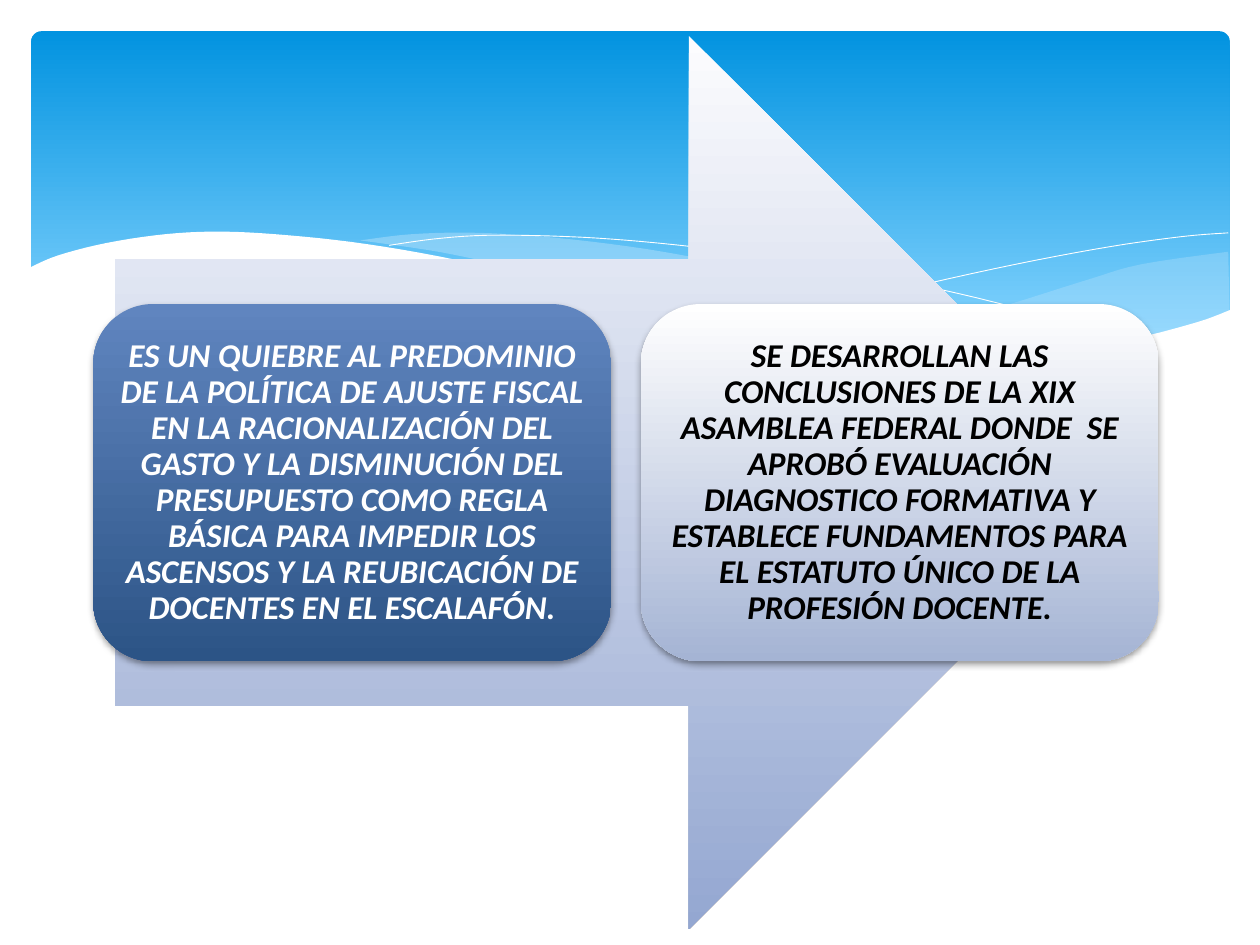
from lxml.etree import SubElement
from pptx import Presentation
from pptx.dml.color import RGBColor
from pptx.enum.shapes import MSO_SHAPE
from pptx.enum.text import MSO_ANCHOR, PP_ALIGN
from pptx.oxml.ns import qn
from pptx.util import Cm, Pt

UNIT = 0.0254
STEPS = 5

RIGHT_TOP = [(950, 175), (881, 185), (836, 198), (754, 223), (681, 237), (636, 240)]
RIGHT_LOW = [(636, 240), (680, 247), (720, 251), (767, 252.5), (810, 252),
             (847, 249), (888, 242), (924, 232), (951, 222)]
MID_TOP = [(261, 166), (303, 161), (355, 160), (417, 164), (489, 173), (559, 186),
           (604, 197), (681, 215), (750, 229), (812, 240), (868, 248)]
MID_LOW = [(868, 248), (823, 252), (771, 253), (711, 249), (640, 241), (541, 223),
           (466, 207), (402, 191), (358, 182), (317, 174), (261, 166)]
LONG_LINE = [(284, 170), (319, 165), (362, 162), (425, 163), (485, 167), (557, 175),
             (640, 188), (735, 208), (806, 226), (882, 247)]
SHORT_LINE = [(588, 232), (628, 221), (695, 204), (781, 185), (856, 171),
              (913, 163), (950, 160)]
FRONT_TOP = [(-2, 188), (21, 178), (60, 168), (107, 161), (152, 159), (205, 162),
             (267, 169), (340, 182), (422, 202), (504, 220), (578, 233), (643, 243),
             (701, 249), (768, 252), (825, 250), (874, 244), (925, 231), (952, 221)]
FRONT_LOW = [(952, 304), (-2, 304)]

CARDS = [
    ("ES UN QUIEBRE AL PREDOMINIO DE LA POLÍTICA DE AJUSTE FISCAL EN LA "
     "RACIONALIZACIÓN DEL GASTO Y LA DISMINUCIÓN DEL PRESUPUESTO COMO REGLA BÁSICA "
     "PARA IMPEDIR LOS ASCENSOS Y LA REUBICACIÓN DE DOCENTES EN EL ESCALAFÓN.",
     ("6085BF", "2C5486"), "FFFFFF"),
    ("SE DESARROLLAN LAS CONCLUSIONES DE LA XIX ASAMBLEA FEDERAL DONDE  SE APROBÓ "
     "EVALUACIÓN DIAGNOSTICO FORMATIVA Y ESTABLECE FUNDAMENTOS PARA EL ESTATUTO "
     "ÚNICO DE LA PROFESIÓN DOCENTE.",
     ("FFFFFF", "A5B4D4"), "000000"),
]


def color(code):
    """Turn a hex string into a colour."""
    return RGBColor.from_string(code)


def paint(shape, code, alpha=100):
    """Give a shape a plain fill of the given opacity and no line."""
    shape.shadow.inherit = False
    shape.line.fill.background()
    shape.fill.solid()
    shape.fill.fore_color.rgb = color(code)
    if alpha < 100:
        tone = shape._element.spPr.find(".//" + qn("a:srgbClr"))
        SubElement(tone, qn("a:alpha"), val=str(alpha * 1000))


def blend(shape, codes, end=1):
    """Give a shape a fill that runs from top to bottom, and no line."""
    shape.shadow.inherit = False
    shape.line.fill.background()
    shape.fill.gradient()
    shape.fill.gradient_angle = 270
    for stop, code, place in zip(shape.fill.gradient_stops, codes, (0, end)):
        stop.color.rgb = color(code)
        stop.position = place


def shade(shape):
    """Drop a soft shadow below a shape."""
    effects = shape._element.spPr.find(qn("a:effectLst"))
    outer = SubElement(effects, qn("a:outerShdw"), blurRad=str(Pt(4)), dist=str(Pt(2)),
                       dir="5400000", algn="ctr", rotWithShape="0")
    tone = SubElement(outer, qn("a:srgbClr"), val="000000")
    SubElement(tone, qn("a:alpha"), val="38000")


def smooth(knots):
    """Return points along a Catmull-Rom curve through the knots."""
    ends = [knots[0], *knots, knots[-1]]
    points = [knots[0]]
    for a, b, c, d in zip(ends, ends[1:], ends[2:], ends[3:]):
        for step in range(1, STEPS + 1):
            t = step / STEPS
            points.append(tuple(
                (2 * q + (r - p) * t + (2 * p - 5 * q + 4 * r - s) * t ** 2
                 + (3 * q - p - 3 * r + s) * t ** 3) / 2
                for p, q, r, s in zip(a, b, c, d)))
    return points


def trace(slide, box, points, close=True):
    """Draw a path whose points are measured from the corner of the box."""
    left, top = box[:2]
    spots = [(Cm(left + x * UNIT), Cm(top + y * UNIT)) for x, y in points]
    pen = slide.shapes.build_freeform(*spots[0])
    pen.add_line_segments(spots[1:], close=close)
    return pen.convert_to_shape()


def add_band(slide, box):
    """Draw the blue band with its waves."""
    band = slide.shapes.add_shape(MSO_SHAPE.ROUNDED_RECTANGLE, *map(Cm, box))
    band.adjustments[0] = 0.03
    blend(band, ("0293E0", "83D3FE"), 0.9)
    paint(trace(slide, box, smooth(RIGHT_TOP) + smooth(RIGHT_LOW)), "C6E7FC", 29)
    paint(trace(slide, box, smooth(MID_TOP) + smooth(MID_LOW)), "C6E7FC", 40)
    for knots in (LONG_LINE, SHORT_LINE):
        curve = trace(slide, box, smooth(knots), close=False)
        curve.shadow.inherit = False
        curve.fill.background()
        curve.line.color.rgb = color("FFFFFF")
        curve.line.width = Pt(0.5)
    paint(trace(slide, box, smooth(FRONT_TOP) + FRONT_LOW), "FFFFFF")


def add_card(slide, box, text, codes, ink):
    """Draw one rounded card with its text."""
    card = slide.shapes.add_shape(MSO_SHAPE.ROUNDED_RECTANGLE, *map(Cm, box))
    blend(card, codes)
    shade(card)
    frame = card.text_frame
    frame.word_wrap = True
    frame.vertical_anchor = MSO_ANCHOR.MIDDLE
    frame.margin_left = frame.margin_right = Cm(0.2)
    frame.margin_top = frame.margin_bottom = Cm(0.2)
    para = frame.paragraphs[0]
    para.alignment = PP_ALIGN.CENTER
    para.line_spacing = 0.9
    run = para.add_run()
    run.text = text
    font = run.font
    font.name, font.size = "Calibri", Pt(19)
    font.bold = font.italic = True
    font.color.rgb = color(ink)


def add_flow(slide, box):
    """Draw the wide arrow and the row of cards across its middle."""
    left, top, width, height = box
    arrow = slide.shapes.add_shape(MSO_SHAPE.RIGHT_ARROW, *map(Cm, box))
    blend(arrow, ("FCFCFE", "94A7D1"))
    wide, high, gap = 10.44, height * 0.4, 0.6
    start = left - 0.44
    for i, card in enumerate(CARDS):
        spot = (start + i * (wide + gap), top + (height - high) / 2, wide, high)
        add_card(slide, spot, *card)


def main():
    """Build and save the slide."""
    deck = Presentation()
    deck.slide_width, deck.slide_height = Cm(25.4), Cm(19.05)
    slide = deck.slides.add_slide(deck.slide_layouts[6])
    add_band(slide, (0.63, 0.63, 24.16, 6.86))
    add_flow(slide, (2.32, 0.73, 20.57, 18))
    deck.save("out.pptx")


if __name__ == "__main__":
    main()
